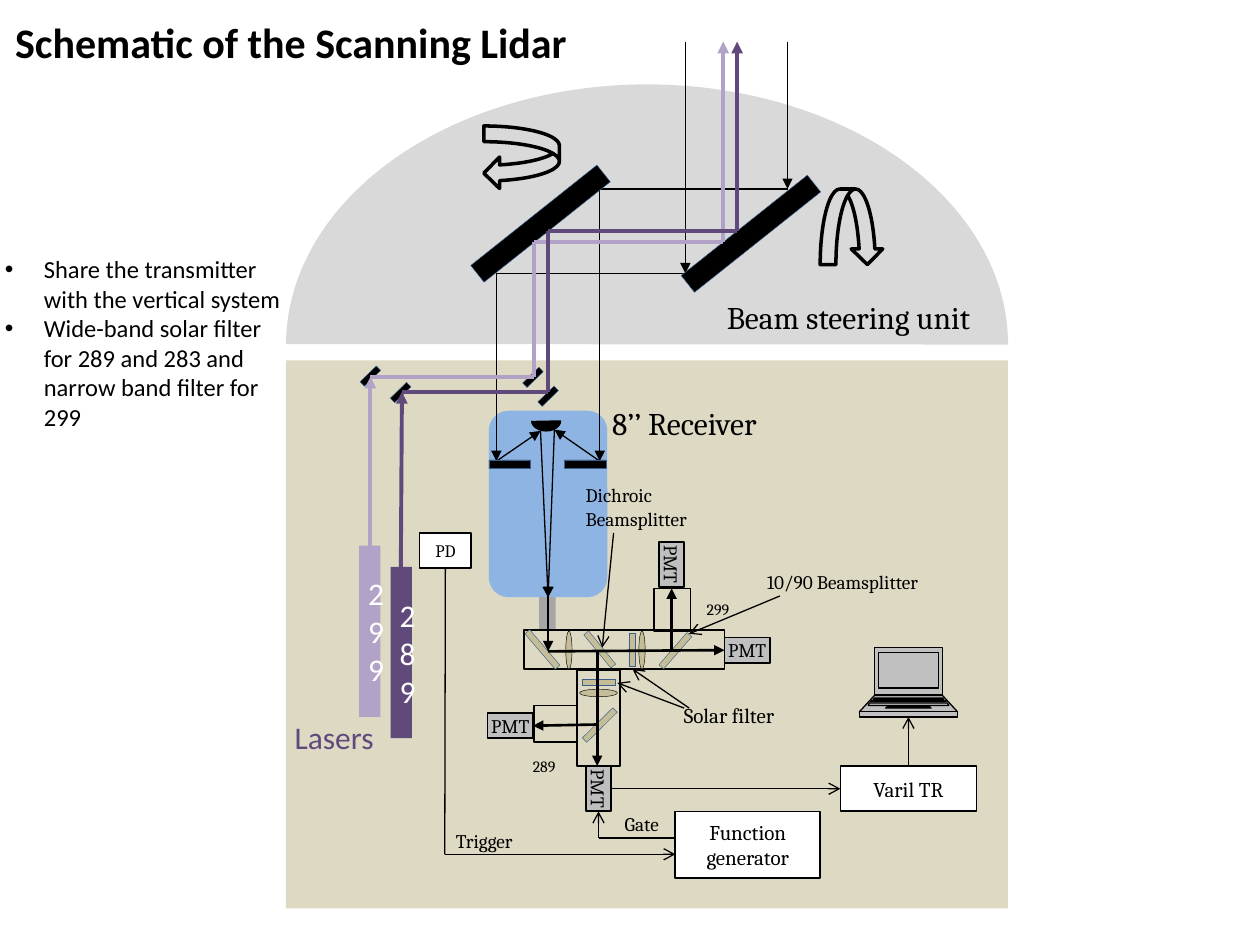
from pptx import Presentation
from pptx import util as u
from pptx.dml.color import RGBColor
from pptx.enum import shapes, text
from pptx.oxml.ns import qn
from lxml import etree

KIND = shapes.MSO_SHAPE
BLACK, WHITE, LILAC, PURPLE = "000000", "FFFFFF", "B3A2C7", "604A7B"
GLASS, STEEL, GREY = "C4BD97", "3A5F8C", "BFBFBF"
COLS, ROWS = 10, 7.5  # all places below are in these columns and rows

TITLE = "Schematic of the Scanning Lidar"
NOTES = [
    "Share the transmitter with the vertical system",
    "Wide-band solar filter for 289 and 283 and narrow band filter for 299",
]

# style: preset, fill, line colour, line width
STYLES = {
    "bench": (KIND.RECTANGLE, "DDD9C3", None, 0),
    "scope": (KIND.ROUNDED_RECTANGLE, "8EB4E3", None, 0),
    "dome": (KIND.CHORD, "D9D9D9", None, 0),
    "bowl": (KIND.CHORD, BLACK, None, 0),
    "mirror": (KIND.RECTANGLE, BLACK, STEEL, 0.25),
    "plate": (KIND.RECTANGLE, GLASS, STEEL, 0.25),
    "lens": (KIND.OVAL, GLASS, BLACK, 0.25),
    "tube": (KIND.RECTANGLE, None, BLACK, 1),
    "neck": (KIND.RECTANGLE, "A6A6A6", None, 0),
    "turn": (KIND.CURVED_LEFT_ARROW, None, BLACK, 2),
    "box": (KIND.RECTANGLE, WHITE, BLACK, 1),
    "pmt": (KIND.RECTANGLE, GREY, BLACK, 1),
    "laser 299": (KIND.RECTANGLE, LILAC, None, 0),
    "laser 289": (KIND.RECTANGLE, PURPLE, None, 0),
}
ADJUST = {"bowl": (52.61, 162), "dome": (54.05, 162)}

# style, left, top, width, height, turn in degrees
HOUSING = [
    ("bench", 2.27, 2.86, 5.73, 4.35, 0),
    ("scope", 3.88, 3.26, 0.94, 1.48, 0),
    ("bowl", 4.25, 3.22, 0.17, 0.24, 270),
    ("dome", 3.07, -0.13, 4.13, 5.73, 90),
    ("turn", 3.84, 1, 0.6, 0.5, 0),
    ("turn", 6.46, 1.55, 0.6, 0.5, 270),
]
MIRRORS = [("mirror", x, y, 1.28, 0.17, 321.5) for x, y in [(3.65, 1.69), (5.32, 1.77)]]
MIRRORS += [("mirror", x, 3.65, 0.33, 0.07, 0) for x in (3.88, 4.48)]
MIRRORS += [("mirror", x, y, 0.18, 0.05, 315.8) for x, y in
            [(4.14, 2.97), (4.26, 3.12), (2.85, 2.96), (3.09, 3.09)]]
OPTICS = [
    ("neck", 4.28, 4.74, 0.13, 0.26, 0),
    ("tube", 4.16, 5, 1.59, 0.31, 0),
    ("tube", 4.58, 5.32, 0.34, 0.76, 0),
    ("tube", 4.24, 5.6, 0.34, 0.29, 0),
    ("tube", 5.19, 4.67, 0.29, 0.34, 0),
    ("plate", 4.12, 5.13, 0.37, 0.05, 49.5),
    ("plate", 4.59, 5.13, 0.34, 0.05, 50.8),
    ("plate", 4.89, 5.13, 0.26, 0.05, 90),
    ("plate", 5.19, 5.14, 0.34, 0.05, 131.1),
    ("plate", 4.62, 5.39, 0.26, 0.05, 180),
    ("plate", 4.59, 5.73, 0.34, 0.05, 135.3),
    ("lens", 4.49, 5.01, 0.05, 0.3, 0),
    ("lens", 5.07, 5.01, 0.05, 0.3, 0),
    ("lens", 4.72, 5.35, 0.06, 0.3, 90),
]
# name: part, words, size
BOXES = {
    "right": (("pmt", 5.75, 5.06, 0.36, 0.2, 0), "PMT", 11),
    "left": (("pmt", 3.87, 5.66, 0.36, 0.2, 0), "PMT", 11),
    "low": (("pmt", 4.57, 6.16, 0.36, 0.2, 90), "PMT", 11),
    "top": (("pmt", 5.15, 4.38, 0.36, 0.2, 90), "PMT", 11),
    "logger": (("box", 6.67, 6.08, 1.08, 0.36, 0), "Varil TR", 12),
    "clock": (("box", 5.36, 6.44, 1.15, 0.53, 0), "Function generator", 12),
    "diode": (("box", 3.33, 4.23, 0.41, 0.28, 0), "PD", 10),
    "299": (("laser 299", 2.85, 4.33, 0.17, 1.36, 0), "299", 18),
    "289": (("laser 289", 3.1, 4.5, 0.17, 1.36, 0), "289", 18),
}
# words, left, top, width, height, size
LABELS = [
    ("Beam steering unit", 5.67, 2.32, 2.24, 0.4, 18),
    ("8’’ Receiver", 4.76, 3.16, 1.43, 0.4, 18),
    ("10/90 Beamsplitter", 5.99, 4.48, 1.51, 0.29, 11),
    ("Solar filter", 5.33, 5.53, 0.96, 0.3, 12),
    ("Gate", 4.86, 6.4, 0.5, 0.29, 11),
    ("Trigger", 3.52, 6.53, 0.69, 0.29, 11),
    ("Dichroic Beamsplitter", 4.55, 3.79, 1.11, 0.47, 11),
    ("299", 5.51, 4.71, 0.41, 0.25, 9),
    ("289", 4.13, 5.96, 0.41, 0.25, 9),
    ("Lasers", 2.24, 5.65, 0.84, 0.4, 18),
]

# stops along the way, then the legs that end in an arrowhead
SKY = [
    ([(5.44, 0.33), (5.44, 2.17), (3.94, 2.17), (3.94, 3.66), (4.29, 3.42), (4.35, 4.74)], (0, 2, 3, 4)),
    ([(6.25, 0.33), (6.25, 1.5), (4.76, 1.5), (4.76, 3.66), (4.4, 3.41), (4.35, 4.74)], (0, 2, 3, 4)),
]
LILAC_WAY = [([(2.94, 4.33), (2.94, 2.99), (4.24, 2.99), (4.24, 1.92), (5.74, 1.92), (5.74, 0.33)], (0, 4))]
PURPLE_WAY = [([(3.18, 4.71), (3.19, 3.11), (4.35, 3.11), (4.35, 1.83), (5.85, 1.83), (5.85, 0.33)], (0, 4))]
# a stop may also be (box name, side)
DETECT = [
    ([(4.35, 4.73), (4.35, 5.17), ("right", 1)], (0, 1)),
    ([(5.33, 5.17), (5.33, 4.67)], (0,)),
    ([(4.74, 5.16), (4.74, 6.08)], (0,)),
    ([(4.74, 5.75), ("left", 3)], (0,)),
]
SIGNALS = [
    ([("diode", 2), (3.53, 6.78), (5.36, 6.78)], (1,)),
    ([(5.36, 6.65), (4.75, 6.65), (4.75, 6.44)], (1,)),
    ([(4.85, 6.26), ("logger", 1)], (0,)),
    ([("logger", 0), (7.21, 5.69)], (0,)),
    ([(5.43, 5.62), (4.9, 5.42)], (0,)),
    ([(5.47, 5.62), (5.02, 5.31)], (0,)),
    ([(4.87, 4.23), (4.78, 5.14)], (0,)),
    ([(6.19, 4.73), (5.47, 5.03)], (0,)),
]
# laptop panels: top, bottom, half width at top and at bottom
AXIS = 7.21
PANELS = [(5.14, 5.51, 0.27, 0.27), (5.52, 5.65, 0.27, 0.39), (5.65, 5.69, 0.39, 0.39),
          (5.18, 5.46, 0.24, 0.24), (5.54, 5.55, 0.27, 0.28), (5.61, 5.62, 0.17, 0.18),
          (5.56, 5.57, 0.29, 0.3), (5.58, 5.6, 0.31, 0.32)]

deck = Presentation()
deck.slide_width, deck.slide_height = u.Inches(COLS), u.Inches(ROWS)
unit = deck.slide_width / COLS
slide = deck.slides.add_slide(deck.slide_layouts[5])
pool = slide.shapes


def spots(*nums):
    return [round(n * unit) for n in nums]


def tint(code):
    return RGBColor.from_string(code)


def paint(shape, fill, line, width):
    shape.shadow.inherit = False
    if fill:
        shape.fill.solid()
        shape.fill.fore_color.rgb = tint(fill)
    else:
        shape.fill.background()
    if line:
        shape.line.color.rgb = tint(line)
        shape.line.width = u.Pt(width)
    else:
        shape.line.fill.background()


def write(frame, lines, size, color=BLACK, face="Cambria", bold=False, align=text.PP_ALIGN.LEFT):
    frame.text = "\n".join(lines)
    for para in frame.paragraphs:
        para.alignment = align
        for run in para.runs:
            font = run.font
            font.size, font.name, font.bold = u.Pt(size), face, bold
            font.color.rgb = tint(color)


def place(style, x, y, w, h, turn):
    kind, *look = STYLES[style]
    shape = pool.add_shape(kind, *spots(x, y, w, h))
    shape.rotation = turn
    for i, value in enumerate(ADJUST.get(style, ())):
        shape.adjustments[i] = value
    paint(shape, *look)
    return shape


def trace(ways, color, width, tip="triangle"):
    """Draw each way as straight legs, with arrowheads on the legs named."""
    for stops, tips in ways:
        for i, (a, b) in enumerate(zip(stops, stops[1:])):
            ends = [spots(*s) if not isinstance(s[0], str) else [0, 0] for s in (a, b)]
            leg = pool.add_connector(shapes.MSO_CONNECTOR.STRAIGHT, *ends[0], *ends[1])
            for stop, join in ((a, leg.begin_connect), (b, leg.end_connect)):
                if isinstance(stop[0], str):
                    join(made[stop[0]], stop[1])
            leg.line.color.rgb = tint(color)
            leg.line.width = u.Pt(width)
            if i in tips:
                etree.SubElement(leg.line._get_or_add_ln(), qn("a:tailEnd"), type=tip)
            etree.SubElement(leg._element.spPr, qn("a:effectLst"))


def label(lines, x, y, w, h, size, wrap=False, **look):
    frame = pool.add_textbox(*spots(x, y, w, h)).text_frame
    frame.word_wrap = wrap
    write(frame, lines, size, **look)
    return frame


for part in HOUSING:
    place(*part)
trace(SKY, BLACK, 0.75)
for part in MIRRORS:
    place(*part)
trace(LILAC_WAY, LILAC, 2.25)
trace(PURPLE_WAY, PURPLE, 2.25)
for part in OPTICS:
    place(*part)

made = {}
for name, (part, words, size) in BOXES.items():
    made[name] = place(*part)
    frame = made[name].text_frame
    frame.word_wrap = part[0] != "pmt"
    frame.vertical_anchor = text.MSO_ANCHOR.MIDDLE
    laser = part[0].startswith("laser")
    write(frame, [words], size, WHITE if laser else BLACK,
          "Calibri" if laser else "Cambria", align=text.PP_ALIGN.CENTER)

for top, low, near, far in PANELS:
    first, *rest = [spots(AXIS + dx, y) for dx, y in
                    ((-near, top), (near, top), (far, low), (-far, low))]
    pen = pool.build_freeform(*first)
    pen.add_line_segments(rest, close=True)
    paint(pen.convert_to_shape(), "C0C0C0", BLACK, 0.75)

trace(DETECT, BLACK, 1.5)
trace(SIGNALS, BLACK, 0.75, "arrow")

for words, *spot in LABELS:
    look = {"color": PURPLE, "face": "Calibri"} if words == "Lasers" else {}
    label([words], *spot, wrap=words.startswith("Dichroic"), **look)

for para in label(NOTES, -0.06, 1.97, 2.44, 1.51, 14, wrap=True, face="Calibri").paragraphs:
    props = para._p.get_or_add_pPr()
    props.set("marL", str(u.Inches(0.31)))
    props.set("indent", str(-u.Inches(0.31)))
    etree.SubElement(props, qn("a:buFont"), typeface="Arial")
    etree.SubElement(props, qn("a:buChar"), char="•")

title = pool.title
title.left, title.top, title.width, title.height = spots(0.02, 0.08, 4.63, 0.5)
frame = title.text_frame
frame.word_wrap, frame.auto_size = False, text.MSO_AUTO_SIZE.NONE
frame.vertical_anchor = text.MSO_ANCHOR.TOP
write(frame, [TITLE], 24, face="Calibri", bold=True)

deck.save("out.pptx")
